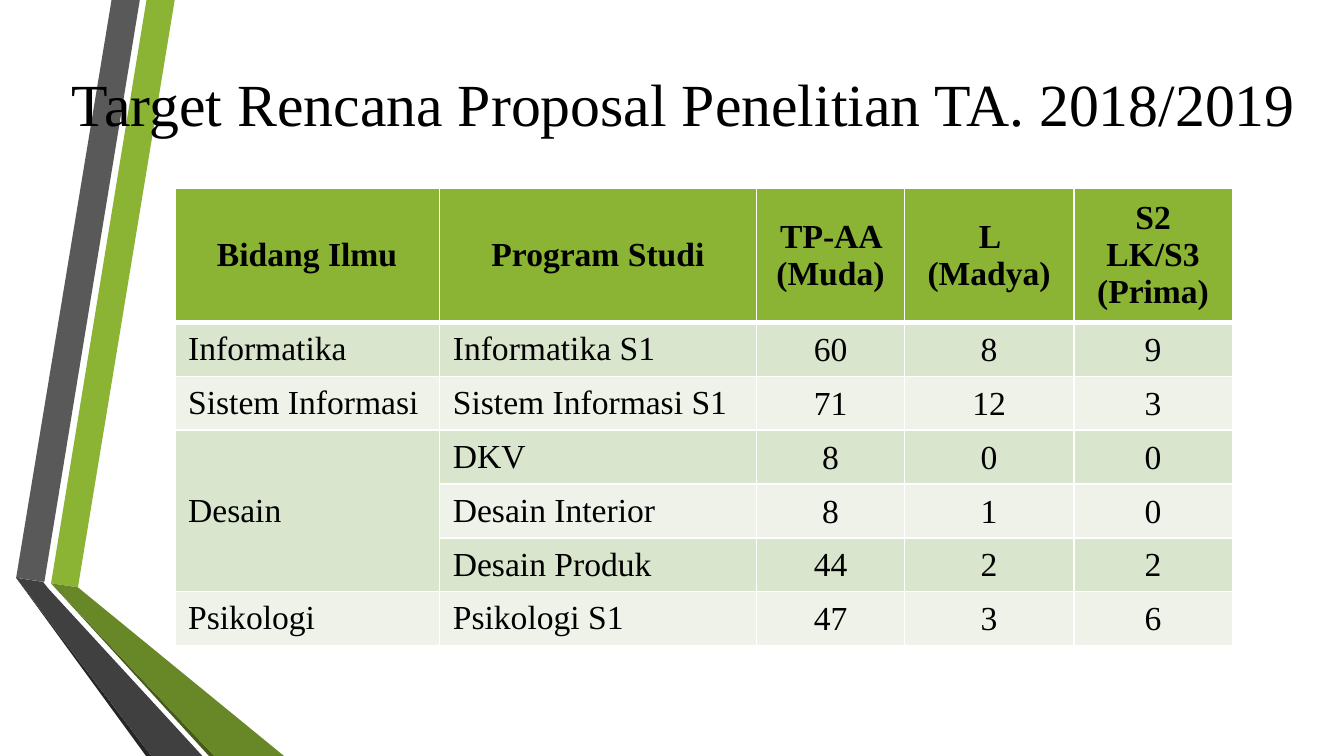
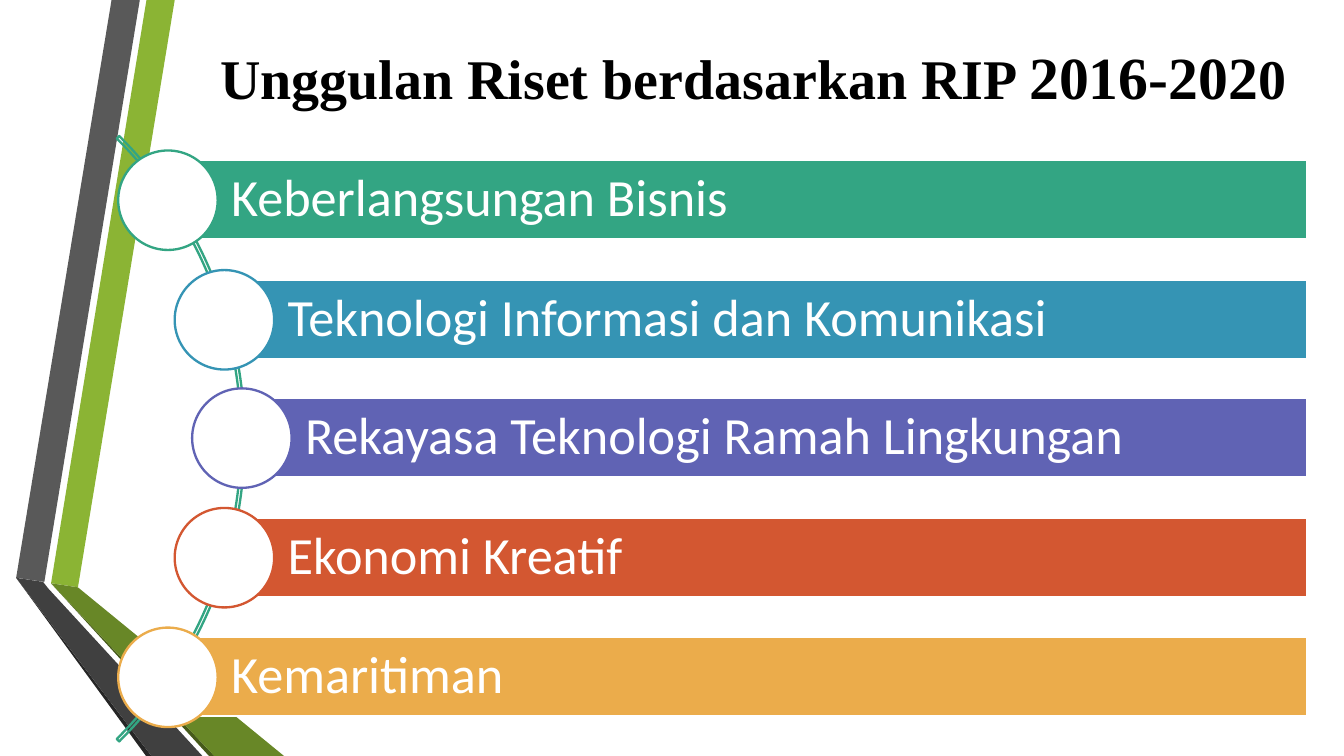
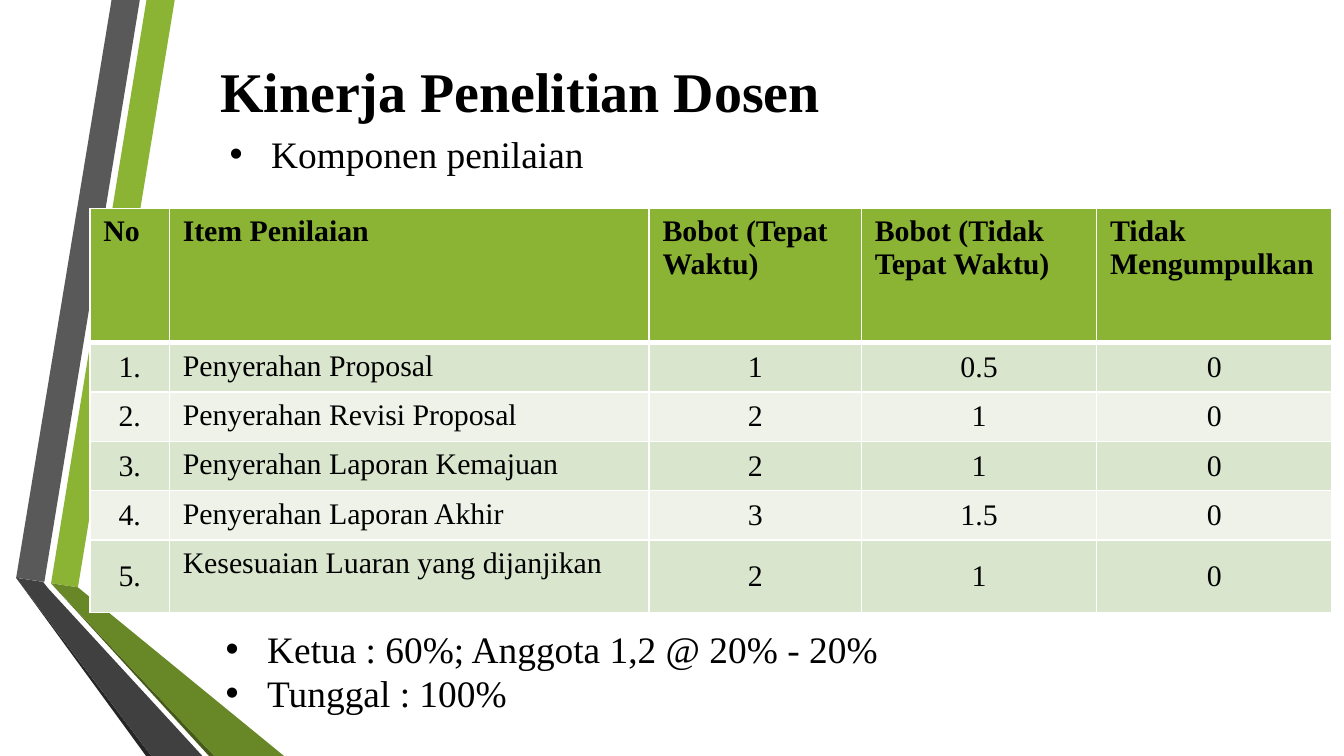
"""Build three slides on research targets, themes and lecturer performance."""
from dataclasses import dataclass

from lxml import etree
from pptx import Presentation
from pptx import util as u
from pptx.dml.color import RGBColor
from pptx.enum import shapes, text
from pptx.oxml import ns

PX = 9144
MID, TOP = text.MSO_ANCHOR.MIDDLE, text.MSO_ANCHOR.TOP
LEFT, MIDST = text.PP_ALIGN.LEFT, text.PP_ALIGN.CENTER


def px(n):
    return u.Emu(n * PX)


def rgb(code):
    return RGBColor.from_string(code)


@dataclass(frozen=True)
class Theme:
    serif: str = "Times New Roman"
    sans: str = "Calibri"
    ink: str = "000000"
    paper: str = "FFFFFF"
    head: str = "8BB434"
    rows: tuple = ("DAE5CE", "EEF2E8")
    bars: tuple = ("33A583", "3594B4", "6063B4", "D35731", "EBAC4B")
    big: int = 32
    title: int = 30
    bar: int = 28
    list: int = 20
    grid: int = 18
    small: int = 16
    edge: float = 1.25
    bands: tuple = (
        ("8BB434", ((38, 434), (58, 437), (130, 0), (109, 0))),
        ("595959", ((104, 0), (83, 0), (12, 430), (33, 433))),
        ("262626", ((12, 430), (109, 563), (113, 563))),
        ("465A1A", ((38, 434), (156, 563), (160, 563))),
        ("688727", ((38, 434), (160, 563), (212, 563), (58, 437))),
        ("404040", ((151, 563), (36, 438), (32, 433), (12, 430), (113, 563))),
    )


class Deck:
    """Holds the theme and the current slide."""

    def __init__(self, look):
        self.look = look
        self.prs = Presentation()
        self.prs.slide_width = px(1000)
        self.prs.slide_height = px(1000) * 9 // 16
        self.slide = None

    def page(self):
        self.slide = self.prs.slides.add_slide(self.prs.slide_layouts[6])
        group = self.slide.shapes.add_group_shape()
        for fill, pts in self.look.bands:
            pen = group.shapes.build_freeform(*pts[0], scale=PX)
            pen.add_line_segments(pts[1:], close=True)
            self.paint(pen.convert_to_shape(), fill)

    def paint(self, shape, fill=None, line=None):
        shape.shadow.inherit = False
        if fill:
            shape.fill.solid()
            shape.fill.fore_color.rgb = rgb(fill)
        else:
            shape.fill.background()
        if line:
            shape.line.color.rgb = rgb(line)
            shape.line.width = u.Pt(self.look.edge)
        else:
            shape.line.fill.background()

    def shape(self, kind, box, fill=None, line=None):
        item = self.slide.shapes.add_shape(kind, *map(px, box))
        self.paint(item, fill, line)
        return item

    def run(self, para, words, size, bold=False, font=None, ink=None):
        run = para.add_run()
        run.text = words
        run.font.size = u.Pt(size)
        run.font.bold = bold
        run.font.name = font or self.look.serif
        run.font.color.rgb = rgb(ink or self.look.ink)

    def frame(self, box):
        frame = self.slide.shapes.add_textbox(*map(px, box)).text_frame
        frame.word_wrap = True
        frame.vertical_anchor = MID
        return frame

    def title(self, box, runs, align=LEFT, bold=True):
        para = self.frame(box).paragraphs[0]
        para.alignment = align
        for words, size in runs:
            self.run(para, words, size, bold)

    def bullets(self, box, lines):
        frame = self.frame(box)
        for i, words in enumerate(lines):
            para = frame.add_paragraph() if i else frame.paragraphs[0]
            props = para._p.get_or_add_pPr()
            props.set("marL", str(px(31)))
            props.set("indent", str(px(-31)))
            font = etree.SubElement(props, ns.qn("a:buFont"))
            font.set("typeface", "Arial")
            etree.SubElement(props, ns.qn("a:buChar")).set("char", "•")
            self.run(para, words, self.look.list)

    def bar(self, box, words, tone):
        bar = self.shape(shapes.MSO_SHAPE.RECTANGLE, box, tone, self.look.paper)
        frame = bar.text_frame
        frame.word_wrap = True
        frame.vertical_anchor = MID
        frame.margin_left = px(47)
        frame.margin_right = frame.margin_top = frame.margin_bottom = px(8)
        para = frame.paragraphs[0]
        para.alignment = LEFT
        para.line_spacing = 0.9
        self.run(para, words, self.look.bar, font=self.look.sans, ink=self.look.paper)

    def border(self, cell, row):
        props = cell._tc.get_or_add_tcPr()
        wide = {"T": 3 if row == 1 else 1, "B": 1 if row else 3}
        for side in "LRTB":
            line = etree.SubElement(props, ns.qn("a:ln" + side))
            line.set("w", str(u.Pt(wide.get(side, 1))))
            fill = etree.SubElement(line, ns.qn("a:solidFill"))
            etree.SubElement(fill, ns.qn("a:srgbClr")).set("val", self.look.paper)

    def table(self, box, cols, rows, data, size, head, side, mids, tight=False):
        item = self.slide.shapes.add_table(len(data), len(cols), *map(px, box))
        grid = item.table
        for col, wide in zip(grid.columns, cols):
            col.width = px(wide)
        for row, tall in zip(grid.rows, rows):
            row.height = px(tall)
        item.height = px(box[3])
        for r, line in enumerate(data):
            for c, words in enumerate(line):
                cell = grid.cell(r, c)
                self.border(cell, r)
                cell.fill.solid()
                tone = self.look.rows[(r - 1) % 2] if r else self.look.head
                cell.fill.fore_color.rgb = rgb(tone)
                align, anchor = (MIDST, MID) if c in mids else (LEFT, side)
                if r == 0:
                    align, anchor = head
                elif tight and c in mids:
                    cell.margin_left = cell.margin_right = cell.margin_top = px(1)
                    cell.margin_bottom = 0
                cell.vertical_anchor = anchor
                para = cell.text_frame.paragraphs[0]
                para.alignment = align
                if words:
                    self.run(para, words, size, r == 0)
        return grid


def targets(deck):
    look = deck.look
    deck.page()
    words = "Target Rencana Proposal Penelitian TA. 2018/2019"
    deck.title((43, 29, 932, 94), [(words, look.big)], MIDST, False)
    data = (
        ("Bidang Ilmu", "Program Studi", "TP-AA (Muda)", "L (Madya)", "S2 LK/S3 (Prima)"),
        ("Informatika", "Informatika S1", "60", "8", "9"),
        ("Sistem Informasi", "Sistem Informasi S1", "71", "12", "3"),
        ("Desain", "DKV", "8", "0", "0"),
        ("", "Desain Interior", "8", "1", "0"),
        ("", "Desain Produk", "44", "2", "2"),
        ("Psikologi", "Psikologi S1", "47", "3", "6"),
    )
    grid = deck.table((130, 140, 787, 340), (197, 236, 110, 126, 118),
                      [45] + [31] * 6, data, look.grid, (MIDST, MID), MID,
                      (2, 3, 4), tight=True)
    grid.cell(3, 0).merge(grid.cell(5, 0))


def themes(deck):
    look = deck.look
    deck.page()
    deck.title((153, 9, 815, 94), [("Unggulan Riset berdasarkan RIP ", look.title),
                                   ("2016-202", look.big), ("0", look.title)], MIDST)
    arc = deck.shape(shapes.MSO_SHAPE.BLOCK_ARC, (-455, 8, 637, 637), line=look.bars[0])
    for i, turn in enumerate((189, 27, 0.004)):
        arc.adjustments[i] = turn
    names = ("Keberlangsungan Bisnis", "Teknologi Informasi dan Komunikasi",
             "Rekayasa Teknologi Ramah Lingkungan", "Ekonomi Kreatif", "Kemaritiman")
    lefts = (125, 167, 180, 167, 125)
    for i, (name, x, tone) in enumerate(zip(names, lefts, look.bars)):
        y = round(119 + 88.7 * i)
        deck.bar((x, y, 973 - x, 59), name, tone)
        deck.shape(shapes.MSO_SHAPE.OVAL, (x - 37, y - 7, 74, 74), look.paper, tone)


def scores(deck):
    look = deck.look
    deck.page()
    deck.title((154, 37, 822, 60), [("Kinerja Penelitian Dosen", look.title)])
    deck.bullets((161, 84, 472, 60), ["Komponen penilaian"])
    data = (
        ("No", "Item Penilaian", "Bobot (Tepat Waktu)", "Bobot (Tidak Tepat Waktu)",
         "Tidak Mengumpulkan"),
        ("1.", "Penyerahan Proposal", "1", "0.5", "0"),
        ("2.", "Penyerahan Revisi Proposal", "2", "1", "0"),
        ("3.", "Penyerahan Laporan Kemajuan", "2", "1", "0"),
        ("4.", "Penyerahan Laporan Akhir", "3", "1.5", "0"),
        ("5.", "Kesesuaian Luaran yang dijanjikan", "2", "1", "0"),
    )
    deck.table((67, 155, 925, 301), (59, 357, 158, 175, 175),
               [100] + [31] * 4 + [54], data, look.small, (LEFT, TOP), TOP, (0, 2, 3, 4))
    deck.bullets((158, 469, 589, 60),
                 ["Ketua : 60%; Anggota 1,2 @ 20% - 20%", "Tunggal : 100%"])


def main():
    deck = Deck(Theme())
    for build in (targets, themes, scores):
        build(deck)
    deck.prs.save("out.pptx")


if __name__ == "__main__":
    main()
